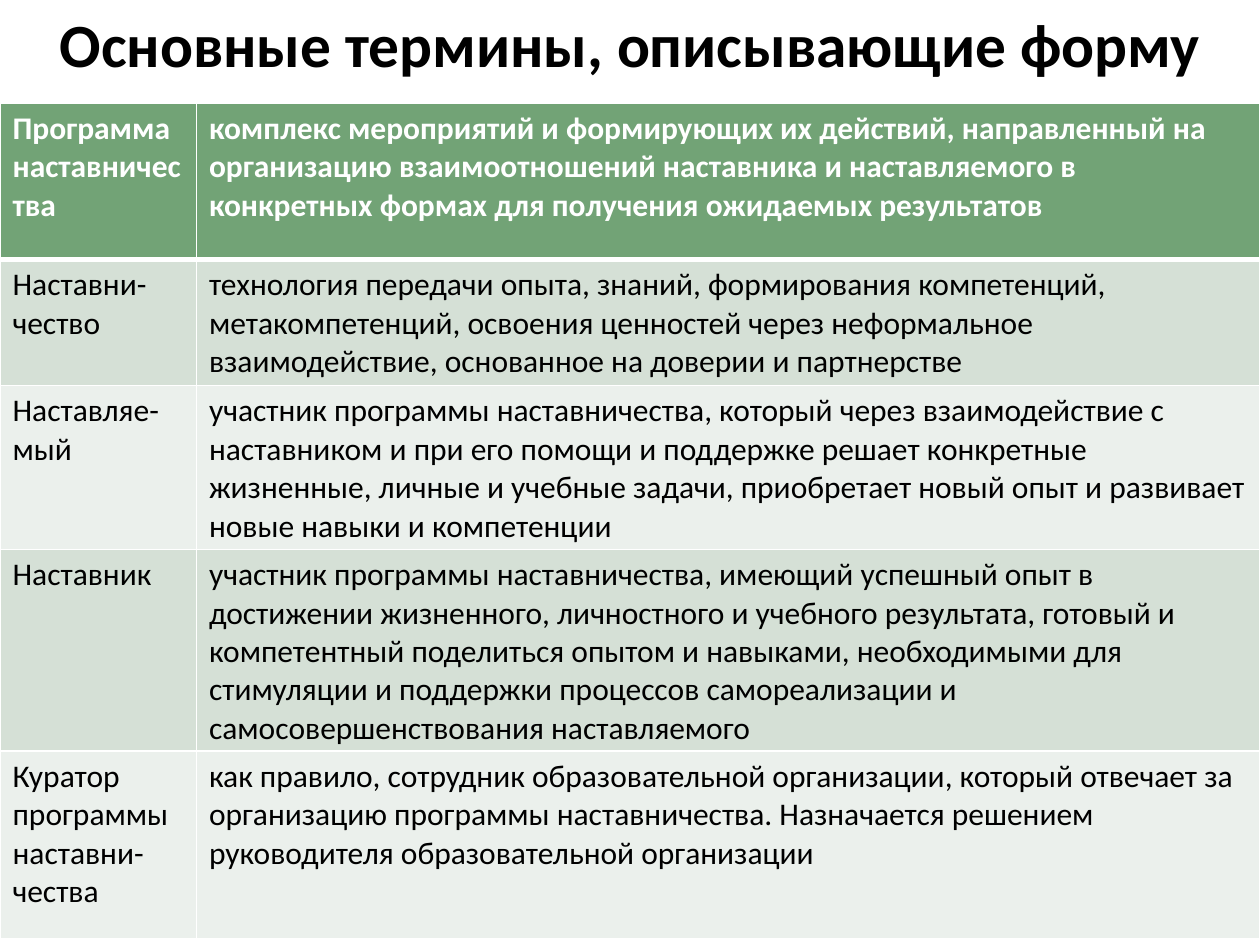
from lxml.etree import SubElement
from pptx import Presentation
from pptx.dml.color import RGBColor
from pptx.enum.text import MSO_ANCHOR, PP_ALIGN
from pptx.oxml.ns import qn
from pptx.util import Cm, Pt

WHITE = RGBColor(0xFF, 0xFF, 0xFF)
BLACK = RGBColor(0x00, 0x00, 0x00)
GREEN = RGBColor(0x72, 0xA3, 0x76)
LIGHT = RGBColor(0xD5, 0xE0, 0xD6)
PALE = RGBColor(0xEB, 0xF0, 0xEC)
FONT = "Calibri"

# Term, meaning, row height in cm
TERMS = [
    ("Программа наставничества",
     "комплекс мероприятий и формирующих их действий, направленный на "
     "организацию взаимоотношений наставника и наставляемого в конкретных "
     "формах для получения ожидаемых результатов", 3.15),
    ("Наставни-чество",
     "технология передачи опыта, знаний, формирования компетенций, "
     "метакомпетенций, освоения ценностей через неформальное "
     "взаимодействие, основанное на доверии и партнерстве", 2.44),
    ("Наставляе-мый",
     "участник программы наставничества, который через взаимодействие с "
     "наставником и при его помощи и поддержке решает конкретные "
     "жизненные, личные и учебные задачи, приобретает новый опыт и развивает "
     "новые навыки и компетенции", 3.15),
    ("Наставник",
     "участник программы наставничества, имеющий успешный опыт в "
     "достижении жизненного, личностного и учебного результата, готовый и "
     "компетентный поделиться опытом и навыками, необходимыми для "
     "стимуляции и поддержки процессов самореализации и "
     "самосовершенствования наставляемого", 3.89),
    ("Куратор программы наставни-чества",
     "как правило, сотрудник образовательной организации, который отвечает за "
     "организацию программы наставничества. Назначается решением "
     "руководителя образовательной организации", 3.78),
]


def style(para, size, color, bold):
    font = para.font
    font.name, font.size, font.bold = FONT, Pt(size), bold
    font.color.rgb = color


def border(cell, widths):
    """Draw white lines; widths are for left, right, top and bottom."""
    props = cell._tc.get_or_add_tcPr()
    for i, (side, width) in enumerate(zip("LRTB", widths)):
        line = props.makeelement(qn(f"a:ln{side}"), {"w": str(Pt(width))})
        fill = SubElement(line, qn("a:solidFill"))
        SubElement(fill, qn("a:srgbClr"), val=str(WHITE))
        props.insert(i, line)  # lines come before the cell fill


def add_title(slide, left, top, width, height):
    box = slide.shapes.add_textbox(left, top, width, height)
    frame = box.text_frame
    frame.word_wrap = True
    frame.vertical_anchor = MSO_ANCHOR.MIDDLE
    para = frame.paragraphs[0]
    para.text = "Основные термины, описывающие форму"
    para.alignment = PP_ALIGN.CENTER
    style(para, 35.1, BLACK, True)


def add_terms(slide, left, top, width, height):
    table = slide.shapes.add_table(
        len(TERMS), 2, left, top, width, height).table
    first = Cm(3.96)
    table.columns[0].width = first
    table.columns[1].width = width - first

    for r, (term, meaning, tall) in enumerate(TERMS):
        table.rows[r].height = Cm(tall)
        head = r == 0
        shade = GREEN if head else (LIGHT if r % 2 else PALE)
        for c, text in enumerate((term, meaning)):
            cell = table.cell(r, c)
            cell.fill.solid()
            cell.fill.fore_color.rgb = shade
            # Thick line between the header and the body
            border(cell, (1, 1, 3 if r == 1 else 1, 3 if head else 1))
            para = cell.text_frame.paragraphs[0]
            para.text = text
            style(para, 18, WHITE if head else BLACK, head)


def main():
    deck = Presentation()
    deck.slide_width, deck.slide_height = Cm(25.4), Cm(19.05)
    slide = deck.slides.add_slide(deck.slide_layouts[6])
    add_title(slide, Cm(0), Cm(-0.28), deck.slide_width, Cm(2.29))
    tall = sum(row[2] for row in TERMS)
    add_terms(slide, Cm(0), Cm(2.08), deck.slide_width, Cm(tall))
    deck.save("out.pptx")


if __name__ == "__main__":
    main()
